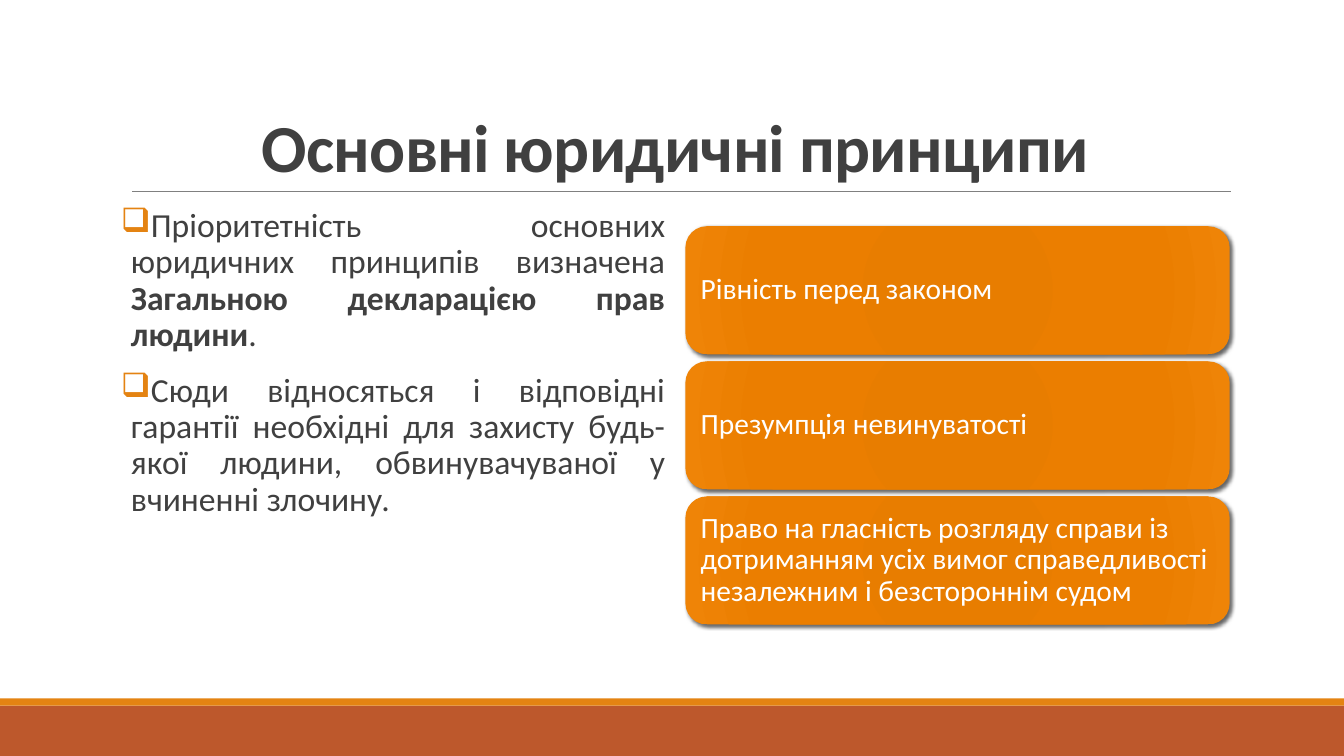
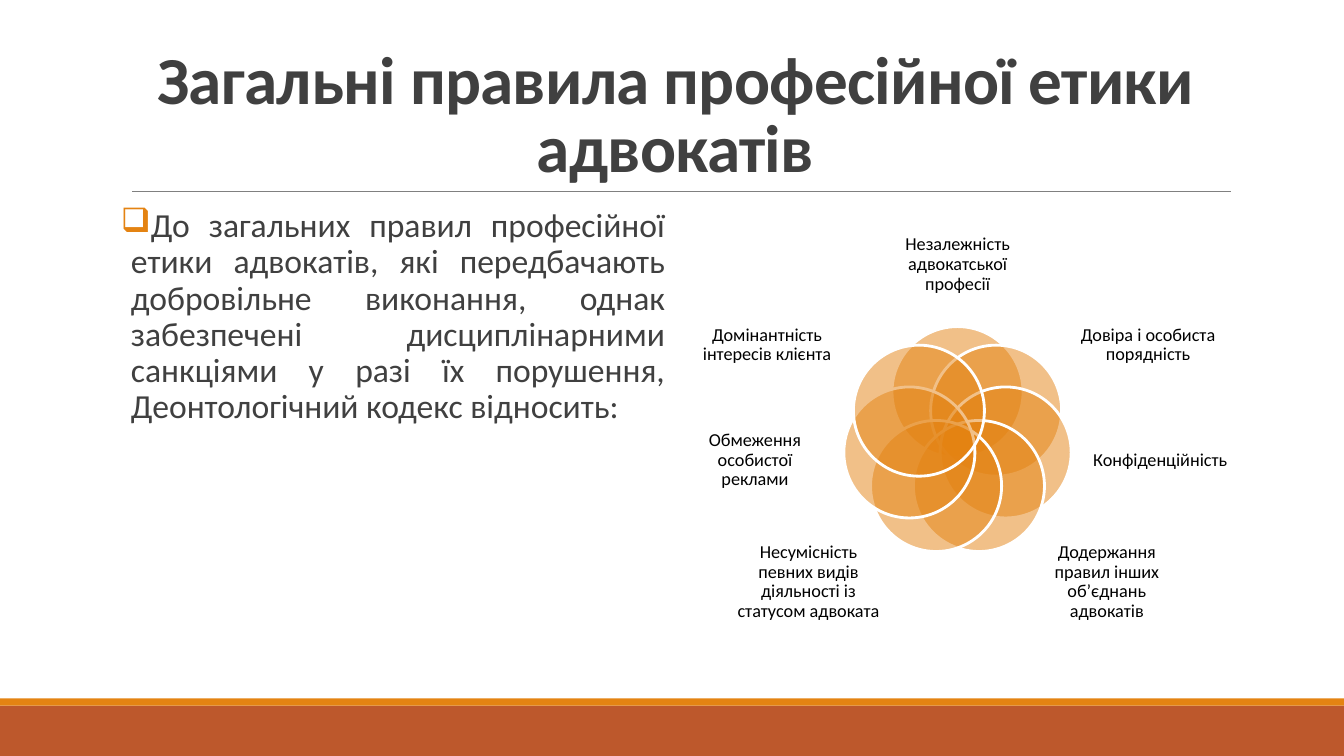
from dataclasses import dataclass
from math import cos, radians, sin

from lxml import etree
from pptx import Presentation
from pptx.dml import color
from pptx.enum import shapes, text
from pptx.oxml import ns
from pptx.util import Inches, Pt

UNIT = 0.2
FONT = "Calibri"
WHITE, BLACK, INK, GREY = "FFFFFF", "000000", "404040", "808080"
ORANGE, RUST = "E48312", "BD582C"
CARD_STOPS = [(0, "E57B00"), (34, "E87D00"), (70, "EB7E00"), (100, "EF8407")]
LEFT, CENTER, JUSTIFY = text.PP_ALIGN.LEFT, text.PP_ALIGN.CENTER, text.PP_ALIGN.JUSTIFY
TOP, MIDDLE, BOTTOM = text.MSO_ANCHOR.TOP, text.MSO_ANCHOR.MIDDLE, text.MSO_ANCHOR.BOTTOM


@dataclass
class Box:
    """A rectangle measured in grid columns and rows."""
    left: float
    top: float
    width: float
    height: float

    def inside(self, left, top, width, height):
        return Box(self.left + left, self.top + top, width, height)

    def lengths(self):
        return [grid(n) for n in (self.left, self.top, self.width, self.height)]


def grid(count):
    return Inches(count * UNIT)


PAGE = Box(0, 0, 66.67, 37.5)
TITLE = Box(6, 1.55, 55, 7.95)
BODY = Box(6, 10.1, 27, 22)
FIGURE = Box(34, 10.1, 27, 22)


def rgb(value):
    return color.RGBColor.from_string(value)


def add_xml(parent, tag, **attributes):
    child = etree.SubElement(parent, ns.qn(tag))
    for name, value in attributes.items():
        child.set(name, str(value))
    return child


def write(frame, paragraphs, size, ink, align=LEFT, anchor=TOP, spacing=0.9,
          margins=(0, 0), bold=False, tracking=None, bullet=None):
    frame.word_wrap = True
    frame.vertical_anchor = anchor
    frame.margin_left = frame.margin_right = Inches(margins[0])
    frame.margin_top = frame.margin_bottom = Inches(margins[1])
    for index, spans in enumerate(paragraphs):
        para = frame.add_paragraph() if index else frame.paragraphs[0]
        para.alignment = align
        para.line_spacing = spacing
        if bullet:
            add_bullet(para, bullet)
        for position, words in enumerate(spans):
            span = para.add_run()
            span.text = words
            span.font.name = FONT
            span.font.size = Pt(size)
            span.font.bold = bold or position % 2 == 1
            span.font.color.rgb = rgb(ink)
            if tracking:
                span.font._element.set("spc", str(tracking))


def add_bullet(para, symbol):
    para.space_before, para.space_after = Pt(12), Pt(2)
    properties = para._p.get_or_add_pPr()
    properties.set("marL", str(Inches(0.1)))
    properties.set("indent", str(-Inches(0.1)))
    add_xml(add_xml(properties, "a:buClr"), "a:srgbClr", val=ORANGE)
    add_xml(properties, "a:buChar", char=symbol)


def add_text(page, box, paragraphs, **style):
    write(page.shapes.add_textbox(*box.lengths()).text_frame, paragraphs, **style)


def add_block(page, kind, box, fill):
    block = page.shapes.add_shape(kind, *box.lengths())
    block.shadow.inherit = False
    block.fill.solid()
    block.fill.fore_color.rgb = rgb(fill)
    block.line.fill.background()
    return block


def add_frame(page, title):
    rectangle = shapes.MSO_SHAPE.RECTANGLE
    add_block(page, rectangle, PAGE.inside(0, 35, PAGE.width, 2.5), RUST)
    add_block(page, rectangle, PAGE.inside(0, 34.65, PAGE.width, 0.35), ORANGE)
    rule = page.shapes.add_connector(
        shapes.MSO_CONNECTOR.STRAIGHT, grid(6.55), grid(9.5), grid(61.05), grid(9.5))
    rule.line.color.rgb = rgb(GREY)
    rule.line.width = Pt(0.5)
    add_xml(rule._element.spPr, "a:effectLst")
    add_text(page, TITLE, [[title]], size=48, ink=INK, align=CENTER, anchor=BOTTOM,
             spacing=0.85, margins=(0.1, 0.05), bold=True, tracking=-50)


def add_body(page, paragraphs):
    add_text(page, BODY, paragraphs, size=24, ink=INK, align=JUSTIFY,
             margins=(0, 0.05), bullet="❑")


def style_card(card):
    properties = card._element.spPr
    gradient = etree.Element(ns.qn("a:gradFill"), rotWithShape="1")
    stops = add_xml(gradient, "a:gsLst")
    for place, tint in CARD_STOPS:
        add_xml(add_xml(stops, "a:gs", pos=place * 1000), "a:srgbClr", val=tint)
    add_xml(add_xml(gradient, "a:path", path="circle"), "a:fillToRect",
            l=100000, t=100000, r=100000, b=100000)
    properties.replace(properties.find(ns.qn("a:solidFill")), gradient)
    shadow = add_xml(properties.find(ns.qn("a:effectLst")), "a:outerShdw",
                     blurRad=Pt(3), dist=Pt(2), dir=45 * 60000, algn="ctr", rotWithShape=0)
    add_xml(add_xml(shadow, "a:srgbClr", val=BLACK), "a:alpha", val=60000)


def add_cards(page, box, captions, height=6.35, gap=0.35):
    pitch = height + gap
    start = (box.height - len(captions) * pitch + gap) / 2
    for index, caption in enumerate(captions):
        place = box.inside(0, start + index * pitch, box.width, height)
        card = add_block(page, shapes.MSO_SHAPE.ROUNDED_RECTANGLE, place, CARD_STOPS[0][1])
        style_card(card)
        write(card.text_frame, [[caption]], size=21, ink=WHITE, anchor=MIDDLE,
              margins=(0.09, 0.09))


def add_petals(page, box, captions, radius=2.45, diameter=6.5):
    middle, hub = box.width / 2, 11.8
    right = [(9.45, 4.85, 7, 4.35), (10.05, 10.4, 6.9, 4.65), (7.4, 16.65, 7.45, 4.25)]
    mirrored = [(-shift, *rest) for shift, *rest in reversed(right)]
    places = [(0, 1.05, 7.45, 3.95), *right, *mirrored]
    for index, (caption, place) in enumerate(zip(captions, places)):
        angle = radians(360 * index / len(captions))
        circle = box.inside(middle + radius * sin(angle) - diameter / 2,
                            hub - radius * cos(angle) - diameter / 2, diameter, diameter)
        petal = add_block(page, shapes.MSO_SHAPE.OVAL, circle, ORANGE)
        tint = petal._element.spPr.find(ns.qn("a:solidFill"))[0]
        add_xml(tint, "a:alpha", val=50000)
        petal.line.color.rgb = rgb(WHITE)
        petal.line.width = Pt(2)
        shift, top, width, height = place
        add_text(page, box.inside(middle + shift - width / 2, top, width, height),
                 [[caption]], size=13, ink=BLACK, align=CENTER, anchor=MIDDLE)


def add_page(deck, title, paragraphs, add_figure, captions):
    page = deck.slides.add_slide(deck.slide_layouts[6])
    add_frame(page, title)
    add_body(page, paragraphs)
    add_figure(page, FIGURE, captions)


def main():
    deck = Presentation()
    deck.slide_width, deck.slide_height = grid(PAGE.width), grid(PAGE.height)
    add_page(
        deck, "Основні юридичні принципи",
        [["Пріоритетність основних юридичних принципів визначена ",
          "Загальною декларацією прав людини", "."],
         ["Сюди відносяться і відповідні гарантії необхідні для захисту будь-якої "
          "людини, обвинувачуваної у вчиненні злочину."]],
        add_cards,
        ["Рівність перед законом",
         "Презумпція невинуватості",
         "Право на гласність розгляду справи із дотриманням усіх вимог "
         "справедливості незалежним і безстороннім судом"])
    add_page(
        deck, "Загальні правила професійної етики адвокатів",
        [["До загальних правил професійної етики адвокатів, які передбачають "
          "добровільне виконання, однак забезпечені дисциплінарними санкціями у разі "
          "їх порушення, Деонтологічний кодекс відносить:"]],
        add_petals,
        ["Незалежність адвокатської професії",
         "Довіра і особиста порядність",
         "Конфіденційність",
         "Додержання правил інших об’єднань адвокатів",
         "Несумісність певних видів діяльності із статусом адвоката",
         "Обмеження особистої реклами",
         "Домінантність інтересів клієнта"])
    deck.save("out.pptx")


if __name__ == "__main__":
    main()
